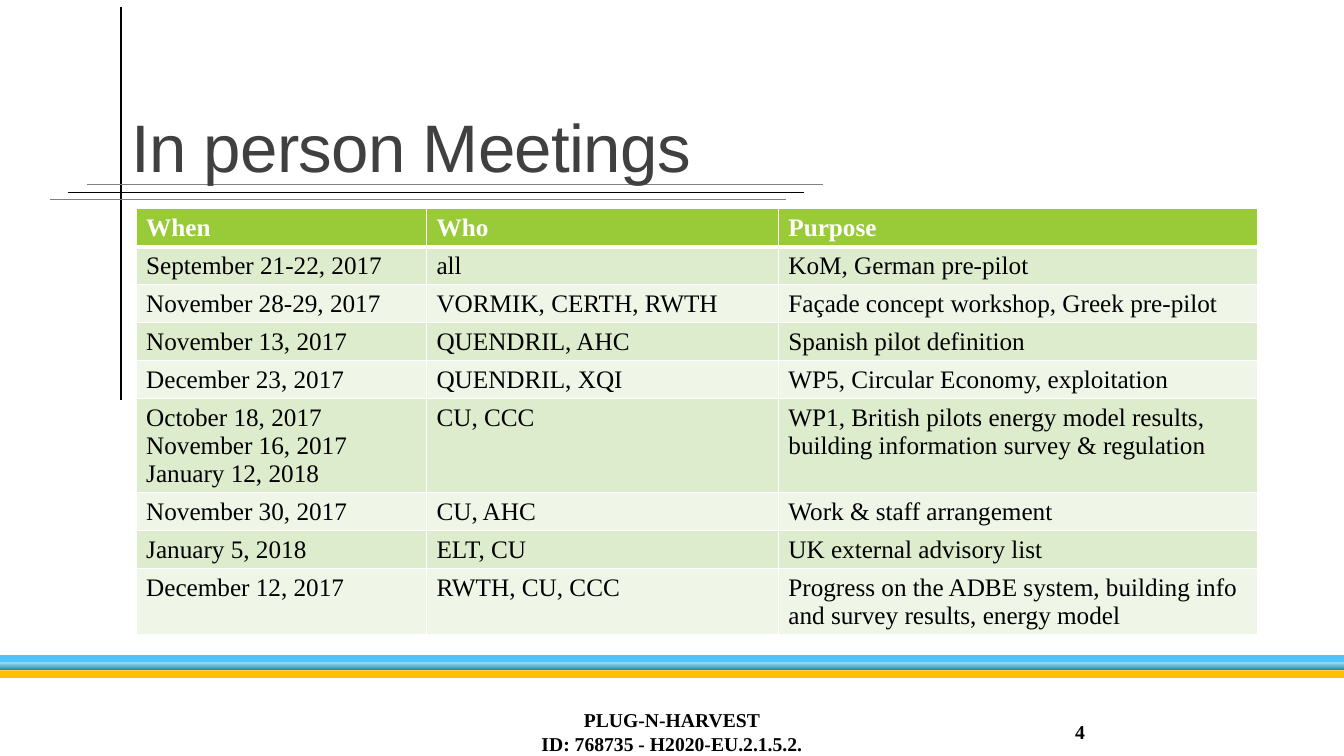
import copy
import pptx
import pptx.util
import pptx.dml.color
import pptx.enum.shapes
import pptx.enum.text
import pptx.oxml
import pptx.oxml.ns
from pptx.util import Inches, Pt

SERIF = "Times New Roman"
TITLE = "In person Meetings"
ROWS = [
    ("When", "Who", "Purpose"),
    ("September 21-22, 2017", "all", "KoM, German pre-pilot"),
    ("November 28-29, 2017", "VORMIK, CERTH, RWTH", "Façade concept workshop, Greek pre-pilot"),
    ("November 13, 2017", "QUENDRIL, AHC", "Spanish pilot definition"),
    ("December 23, 2017", "QUENDRIL, XQI", "WP5, Circular Economy, exploitation"),
    ("October 18, 2017\vNovember 16, 2017\nJanuary 12, 2018", "CU, CCC",
     "WP1, British pilots energy model results, building information survey & regulation"),
    ("November 30, 2017", "CU, AHC", "Work & staff arrangement"),
    ("January 5, 2018", "ELT, CU", "UK external advisory list"),
    ("December 12, 2017", "RWTH, CU, CCC",
     "Progress on the ADBE system, building info and survey results, energy model"),
]
LINES = [1, 1, 1, 1, 1, 3, 1, 1, 2]
COLS = [2.88, 3.49, 4.75]
HEAD, BANDS = "99CB38", ["EFF6E8", "DEECCE"]
BARS = ["51C3F9", [(0, "297E96"), (0.48, "53B5D0"), (1, "95D1E2")], "FFC000"]
RULES = [
    (0.67, 1.91, 7.97, 1.91, "000000", 1),
    (1.2, 0.07, 1.2, 3.97, "000000", 1),
    (0.86, 1.83, 8.16, 1.83, "808080", 0.5),
    (0.5, 1.98, 7.8, 1.98, "808080", 0.5),
]
NOTES = [
    ("PLUG-N-HARVEST\vID: 768735 - H2020-EU.2.1.5.2.", 4.03, 5.27, "CENTER"),
    ("4", 9.43, 1.43, "RIGHT"),
]


def paint(color, code):
    color.rgb = pptx.dml.color.RGBColor.from_string(code)


def style(frame, code, form, para=None):
    for par in frame.paragraphs:
        for key, val in (para or {}).items():
            setattr(par, key, val)
        for run in par.runs:
            for key, val in form.items():
                setattr(run.font, key, val)
            paint(run.font.color, code)


def place(shape, *box):
    for key, val in zip(("left", "top", "width", "height"), box):
        setattr(shape, key, Inches(val))


def edge(cell, low):
    props = cell._tc.get_or_add_tcPr()
    for i, side in enumerate("LRTB"):
        width = Pt(low if side == "B" else 1)
        props.insert(i, pptx.oxml.parse_xml(
            f'<a:ln{side} {pptx.oxml.ns.nsdecls("a")} w="{width}"><a:solidFill>'
            f'<a:srgbClr val="FFFFFF"/></a:solidFill></a:ln{side}>'))


deck = pptx.Presentation()
deck.slide_width, deck.slide_height = Inches(13.33), Inches(7.5)
slide = deck.slides.add_slide(deck.slide_layouts[5])
shapes = slide.shapes
title = shapes.title

for i, tint in enumerate(BARS):
    bar = shapes.add_shape(pptx.enum.shapes.MSO_SHAPE.RECTANGLE, 0,
                           Inches(6.5 + 0.075 * i), deck.slide_width, Inches(0.075))
    bar.shadow.inherit = False
    bar.line.fill.background()
    if isinstance(tint, str):
        bar.fill.solid()
        paint(bar.fill.fore_color, tint)
        continue
    bar.fill.gradient()
    bar.fill.gradient_angle = 90
    stops = bar._element.find(".//" + pptx.oxml.ns.qn("a:gsLst"))
    stops.insert(1, copy.deepcopy(stops[0]))
    for stop, (pos, code) in zip(bar.fill.gradient_stops, tint):
        stop.position = pos
        paint(stop.color, code)

for *ends, code, width in RULES:
    rule = shapes.add_connector(pptx.enum.shapes.MSO_CONNECTOR.STRAIGHT, *map(Inches, ends))
    rule.line.width = Pt(width)
    paint(rule.line.color, code)
    rule._element.spPr.append(
        pptx.oxml.parse_xml(f'<a:effectLst {pptx.oxml.ns.nsdecls("a")}/>'))

highs = [0.1 + 0.277 * n for n in LINES]
grid = shapes.add_table(len(ROWS), len(COLS), Inches(1.35), Inches(2.07),
                        Inches(sum(COLS)), Inches(sum(highs))).table
for col, width in zip(grid.columns, COLS):
    col.width = Inches(width)
for r, row in enumerate(ROWS):
    grid.rows[r].height = Inches(highs[r])
    for c, text in enumerate(row):
        cell = grid.cell(r, c)
        cell.text = text
        edge(cell, 1 if r else 3)
        cell.fill.solid()
        paint(cell.fill.fore_color, BANDS[r % 2] if r else HEAD)
        if r == 0:
            cell.vertical_anchor = pptx.enum.text.MSO_ANCHOR.MIDDLE
        style(cell.text_frame, "000000" if r else "FFFFFF",
              {"name": SERIF, "size": Pt(18), "bold": r == 0})

place(title, 1.2, 0.31, 11, 1.59)
title.text = TITLE
frame = title.text_frame
for key, val in {"vertical_anchor": pptx.enum.text.MSO_ANCHOR.BOTTOM, "word_wrap": True,
                 "auto_size": pptx.enum.text.MSO_AUTO_SIZE.NONE}.items():
    setattr(frame, key, val)
style(frame, "404040", {"name": "Arial", "size": Pt(48)},
      {"alignment": pptx.enum.text.PP_ALIGN.LEFT, "line_spacing": 0.85})
frame.paragraphs[0].runs[0].font._element.set("spc", "-50")
shapes._spTree.append(title._element)

for text, left, width, side in NOTES:
    note = shapes.add_textbox(0, 0, 0, 0)
    place(note, left, 7.06, width, 0.4)
    frame = note.text_frame
    frame.text = text
    frame.word_wrap = True
    frame.vertical_anchor = pptx.enum.text.MSO_ANCHOR.MIDDLE
    style(frame, "000000", {"name": SERIF, "size": Pt(14), "bold": True},
          {"alignment": pptx.enum.text.PP_ALIGN[side]})

deck.save("out.pptx")
